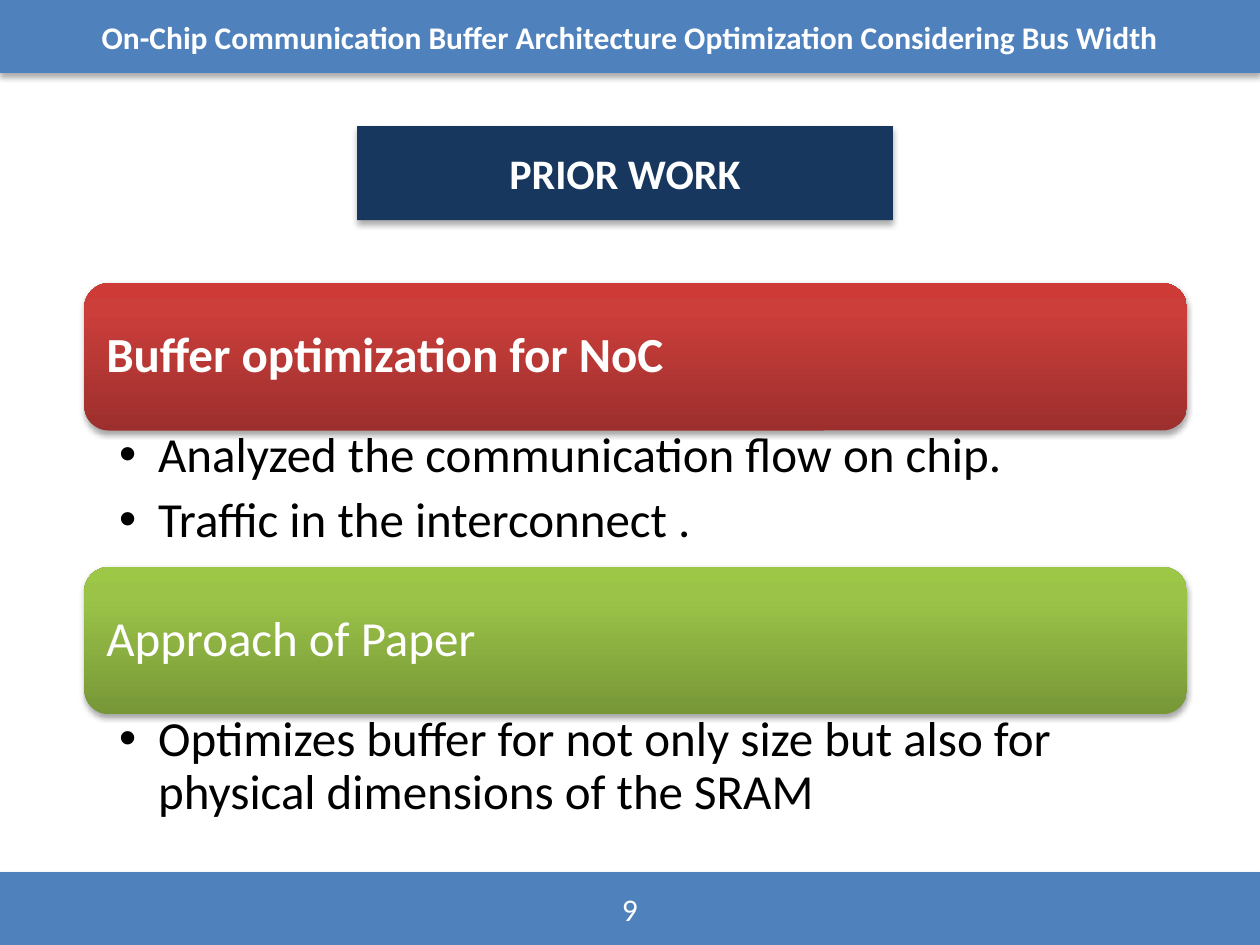
from lxml.etree import SubElement
from pptx import Presentation
from pptx.dml.color import RGBColor
from pptx.enum.shapes import MSO_SHAPE as Shape
from pptx.enum.text import MSO_ANCHOR as Anchor, MSO_AUTO_SIZE as AutoSize, PP_ALIGN as Align
from pptx.oxml import parse_xml
from pptx.oxml.ns import nsdecls, qn
from pptx.util import Cm, Pt

HEADER = "On-Chip Communication Buffer Architecture Optimization Considering Bus Width"
TITLE = "PRIOR WORK"
PAGE_NUMBER = "9"
# Gradient stops run from the bottom of the banner to its top.
SECTIONS = [
    {
        "heading": "Buffer optimization for NoC",
        "bold": True,
        "stops": [(0, "9C2F2D"), (80, "CB3E3A"), (100, "CE3B37")],
        "points": ["Analyzed the communication flow on chip.", "Traffic in the interconnect ."],
    },
    {
        "heading": "Approach of Paper",
        "bold": False,
        "stops": [(0, "779737"), (80, "9BC348"), (100, "9DC746")],
        "points": ["Optimizes buffer for not only size but also for physical dimensions of the SRAM"],
    },
]

FONT = "Calibri"
WHITE, BLACK, BLUE, NAVY = "FFFFFF", "000000", "4F81BD", "17375E"
SLIDE_W, SLIDE_H = Cm(25.4), Cm(19.05)
BAND_H = Cm(1.47)
SECTION_X, SECTION_Y, SECTION_W = Cm(1.7), Cm(5.71), Cm(22.23)
SECTION_PITCH = Cm(5.72)
BANNER_H, POINTS_H = Cm(2.97), Cm(2.61)
POINTS_OFFSET = Cm(2.87)
BULLET_INDENT = Cm(0.79)


def rgb(value):
    return RGBColor.from_string(value)


def add_shadow(shape, blur, distance, opacity):
    shape.shadow.inherit = False
    effects = shape._element.spPr.find(qn("a:effectLst"))
    effects.append(parse_xml(
        f'<a:outerShdw {nsdecls("a")} blurRad="{Pt(blur)}" dist="{Pt(distance)}" dir="5400000" '
        f'rotWithShape="0"><a:srgbClr val="{BLACK}"><a:alpha val="{opacity * 1000}"/>'
        '</a:srgbClr></a:outerShdw>'))


def fill_gradient(shape, stops):
    """Fill with any number of stops, running upwards."""
    shape.fill.gradient()
    gradient = shape._element.spPr.find(qn("a:gradFill"))
    stop_list = gradient.find(qn("a:gsLst"))
    for old_stop in list(stop_list):
        stop_list.remove(old_stop)
    for position, color in stops:
        stop = SubElement(stop_list, qn("a:gs"), pos=str(position * 1000))
        SubElement(stop, qn("a:srgbClr"), val=color)
    gradient.find(qn("a:lin")).set("ang", "16200000")


def set_margins(frame, left, top, right, bottom):
    frame.margin_left, frame.margin_top = Cm(left), Cm(top)
    frame.margin_right, frame.margin_bottom = Cm(right), Cm(bottom)


def add_run(paragraph, text, size, color, bold=False):
    run = paragraph.add_run()
    run.text = text
    run.font.name, run.font.size, run.font.bold = FONT, Pt(size), bold
    run.font.color.rgb = rgb(color)


def style_block(block, text, size, color, bold):
    """Give a flat, shadowed block its fill and centred white text."""
    block.fill.solid()
    block.fill.fore_color.rgb = rgb(color)
    block.line.fill.background()
    add_shadow(block, 3.5, 2.2, 32)
    frame = block.text_frame
    frame.word_wrap = True
    frame.auto_size = AutoSize.NONE
    frame.vertical_anchor = Anchor.MIDDLE
    frame.paragraphs[0].alignment = Align.CENTER
    add_run(frame.paragraphs[0], text, size, WHITE, bold)


def add_banner(slide, top, section):
    banner = slide.shapes.add_shape(
        Shape.ROUNDED_RECTANGLE, SECTION_X, top, SECTION_W, BANNER_H)
    fill_gradient(banner, section["stops"])
    banner.line.fill.background()
    add_shadow(banner, 3.1, 1.8, 35)
    frame = banner.text_frame
    frame.word_wrap = True
    frame.vertical_anchor = Anchor.MIDDLE
    set_margins(frame, 0.3, 0.3, 0.3, 0.3)
    heading = frame.paragraphs[0]
    heading.alignment = Align.LEFT
    heading.line_spacing = 0.9
    add_run(heading, section["heading"], 28, WHITE, section["bold"])


def add_points(slide, top, points):
    frame = slide.shapes.add_textbox(SECTION_X, top, SECTION_W, POINTS_H).text_frame
    frame.word_wrap = True
    set_margins(frame, 0.7, 0.1, 0.56, 0.1)
    for index, point in enumerate(points):
        paragraph = frame.add_paragraph() if index else frame.paragraphs[0]
        paragraph.level = 1
        paragraph.line_spacing = 0.9
        paragraph.space_after = Pt(6.5)
        add_run(paragraph, point, 28, BLACK)
        properties = paragraph._p.get_or_add_pPr()
        properties.set("marL", str(BULLET_INDENT))
        properties.set("indent", str(-BULLET_INDENT))
        SubElement(properties, qn("a:buFont"), typeface="Arial")
        SubElement(properties, qn("a:buChar"), char="•")


def main():
    deck = Presentation()
    deck.slide_width, deck.slide_height = SLIDE_W, SLIDE_H
    slide = deck.slides.add_slide(deck.slide_layouts[5])

    title = slide.shapes.title
    title.left, title.top, title.width, title.height = Cm(7.2), Cm(2.54), Cm(10.8), Cm(1.9)
    style_block(title, TITLE, 24, NAVY, True)

    for top, text, bold in [(0, HEADER, True), (SLIDE_H - BAND_H, PAGE_NUMBER, False)]:
        band = slide.shapes.add_shape(Shape.RECTANGLE, 0, top, SLIDE_W, BAND_H)
        style_block(band, text, 18, BLUE, bold)

    for index, section in enumerate(SECTIONS):
        top = SECTION_Y + index * SECTION_PITCH
        add_banner(slide, top, section)
        add_points(slide, top + POINTS_OFFSET, section["points"])

    deck.save("out.pptx")


if __name__ == "__main__":
    main()
